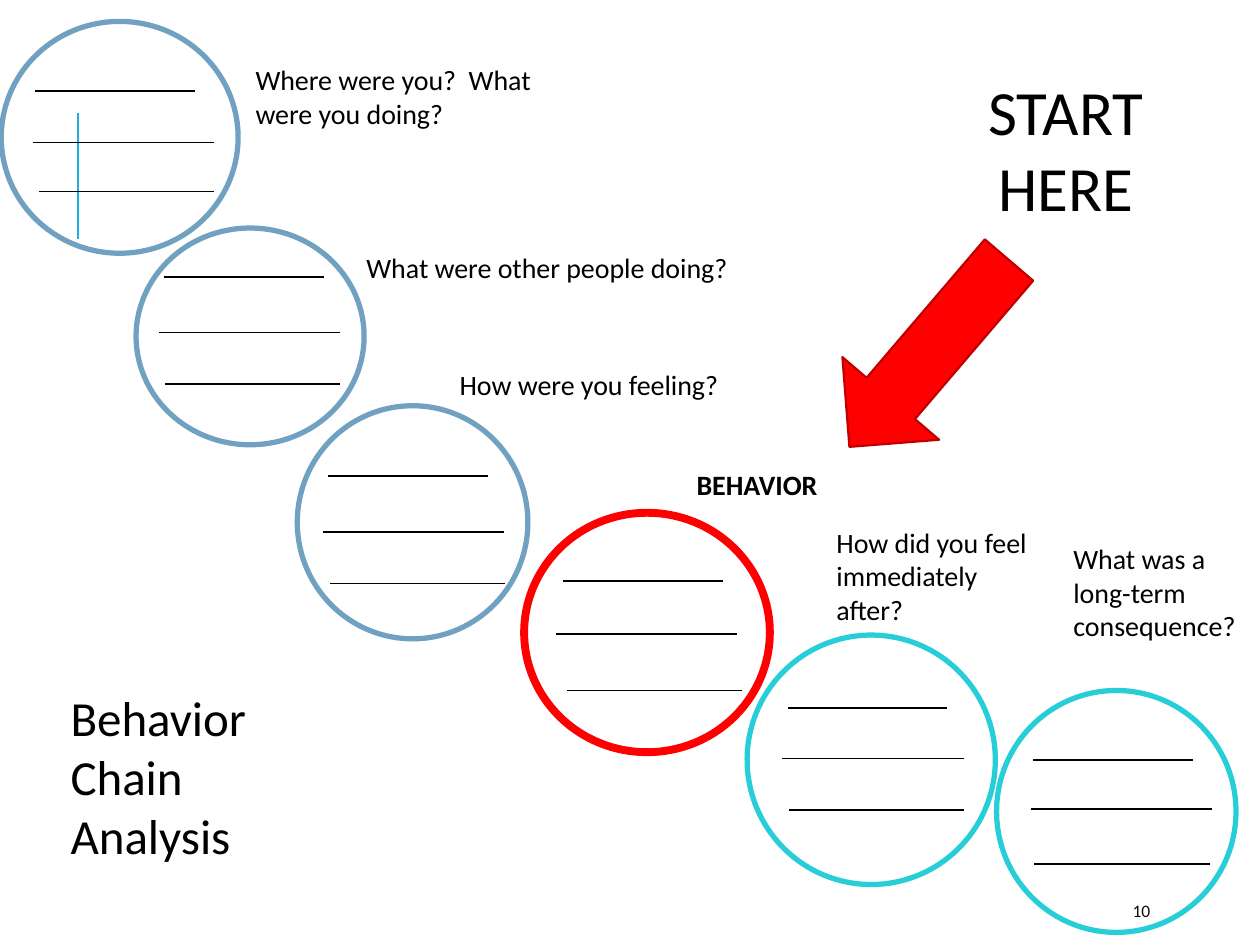
from lxml.etree import SubElement
from pptx import Presentation
from pptx.dml.color import RGBColor
from pptx.enum.shapes import MSO_CONNECTOR as Connector, MSO_SHAPE as Shape
from pptx.enum.text import MSO_ANCHOR as Anchor, MSO_AUTO_SIZE as AutoSize, PP_ALIGN as Align
from pptx.oxml.ns import qn
from pptx.util import Inches, Pt

BLACK = RGBColor(0x00, 0x00, 0x00)
NEAR_BLACK = RGBColor(0x0D, 0x0D, 0x0D)
RED = RGBColor(0xFF, 0x00, 0x00)
DARK_RED = RGBColor(0xC0, 0x00, 0x00)
STEEL = RGBColor(0x70, 0xA1, 0xC0)
TURQUOISE = RGBColor(0x27, 0xCE, 0xD7)
SKY = RGBColor(0x1C, 0xAD, 0xE4)

RULE_LENGTHS = (1.27, 1.44, 1.39)

LINKS = [
    ((0.01, 0.17, 1.88, 1.84), STEEL, 3, [(0.28, 0.72), (0.26, 1.13), (0.31, 1.52)]),
    ((1.08, 1.81, 1.81, 1.72), STEEL, 3, [(1.3, 2.2), (1.26, 2.64), (1.31, 3.05)]),
    ((2.36, 3.22, 1.83, 1.85), STEEL, 3, [(2.6, 3.78), (2.56, 4.22), (2.62, 4.63)]),
    ((5.93, 5.04, 1.97, 1.98), TURQUOISE, 3, [(6.25, 5.62), (6.21, 6.02), (6.26, 6.43)]),
    ((7.91, 5.48, 1.9, 1.92), TURQUOISE, 3, [(8.2, 6.03), (8.18, 6.42), (8.21, 6.86)]),
    ((4.16, 4.07, 1.95, 1.9), RED, 4.5, [(4.47, 4.61), (4.41, 5.03), (4.5, 5.48)]),
]

LABELS = [
    ("Where were you?  What were you doing?", (1.93, 0.45, 2.63, 0.64), {}),
    ("What were other people doing?", (2.81, 1.94, 3.25, 0.37), {}),
    ("How were you feeling?", (3.55, 2.87, 2.43, 0.37), {}),
    ("BEHAVIOR", (5.43, 3.66, 1.36, 0.37), {"bold": True}),
    ("How did you feel immediately after?", (6.54, 4.12, 1.77, 0.91), {}),
    ("What was a long-term consequence?", (8.42, 4.25, 1.58, 0.91), {}),
]


def inches(values):
    return [Inches(value) for value in values]


def write(box, text, align=Align.LEFT, anchor=Anchor.TOP, color=BLACK, **font):
    frame = box.text_frame
    frame.text = text
    settings = {"word_wrap": True, "auto_size": AutoSize.NONE, "vertical_anchor": anchor}
    for name, value in settings.items():
        setattr(frame, name, value)
    font_values = {"name": "Calibri", "size": Pt(16), **font}
    for para in frame.paragraphs:
        para.alignment = align
        for span in para.runs:
            for name, value in font_values.items():
                setattr(span.font, name, value)
            span.font.color.rgb = color


def add_label(page, text, place, **values):
    write(page.shapes.add_textbox(*inches(place)), text, **values)


def add_title(page, text, place):
    title = page.shapes.title
    for name, value in zip(("left", "top", "width", "height"), inches(place)):
        setattr(title, name, value)
    write(title, text, size=Pt(28))


def add_line(page, start, end, color=BLACK, weight=1):
    line = page.shapes.add_connector(Connector.STRAIGHT, *inches(start + end))
    line.line.color.rgb = color
    line.line.width = Pt(weight)
    SubElement(line._element.spPr, qn("a:effectLst"))


def add_outlined(page, kind, place, color, weight):
    shape = page.shapes.add_shape(kind, *inches(place))
    shape.shadow.inherit = False
    shape.fill.background()
    shape.line.color.rgb = color
    shape.line.width = Pt(weight)
    return shape


def add_link(page, place, color, weight, rule_starts):
    add_outlined(page, Shape.OVAL, place, color, weight)
    for (left, top), length in zip(rule_starts, RULE_LENGTHS):
        add_line(page, (left, top), (left + length, top))


def add_start_arrow(page):
    arrow = add_outlined(page, Shape.DOWN_ARROW, (6.87, 1.83, 1.01, 1.95), DARK_RED, 1.25)
    arrow.fill.solid()
    arrow.fill.fore_color.rgb = RED
    arrow.rotation = 40.5


def main():
    deck = Presentation()
    deck.slide_width, deck.slide_height = inches((10, 7.5))
    page = deck.slides.add_slide(deck.slide_layouts[5])
    add_title(page, "Behavior\nChain\nAnalysis", (0.46, 5.41, 4.7, 1.51))
    add_line(page, (0.62, 1.9), (0.62, 0.9), SKY, 1.5)
    for link in LINKS:
        add_link(page, *link)
    add_start_arrow(page)
    for text, place, values in LABELS:
        add_label(page, text, place, **values)
    add_label(page, "START\nHERE", (7.6, 0.53, 1.72, 1.31), align=Align.CENTER, size=Pt(36))
    add_label(page, "10", (8.89, 7.08, 0.8, 0.3), anchor=Anchor.MIDDLE, color=NEAR_BLACK, size=Pt(10))
    deck.save("out.pptx")


if __name__ == "__main__":
    main()
